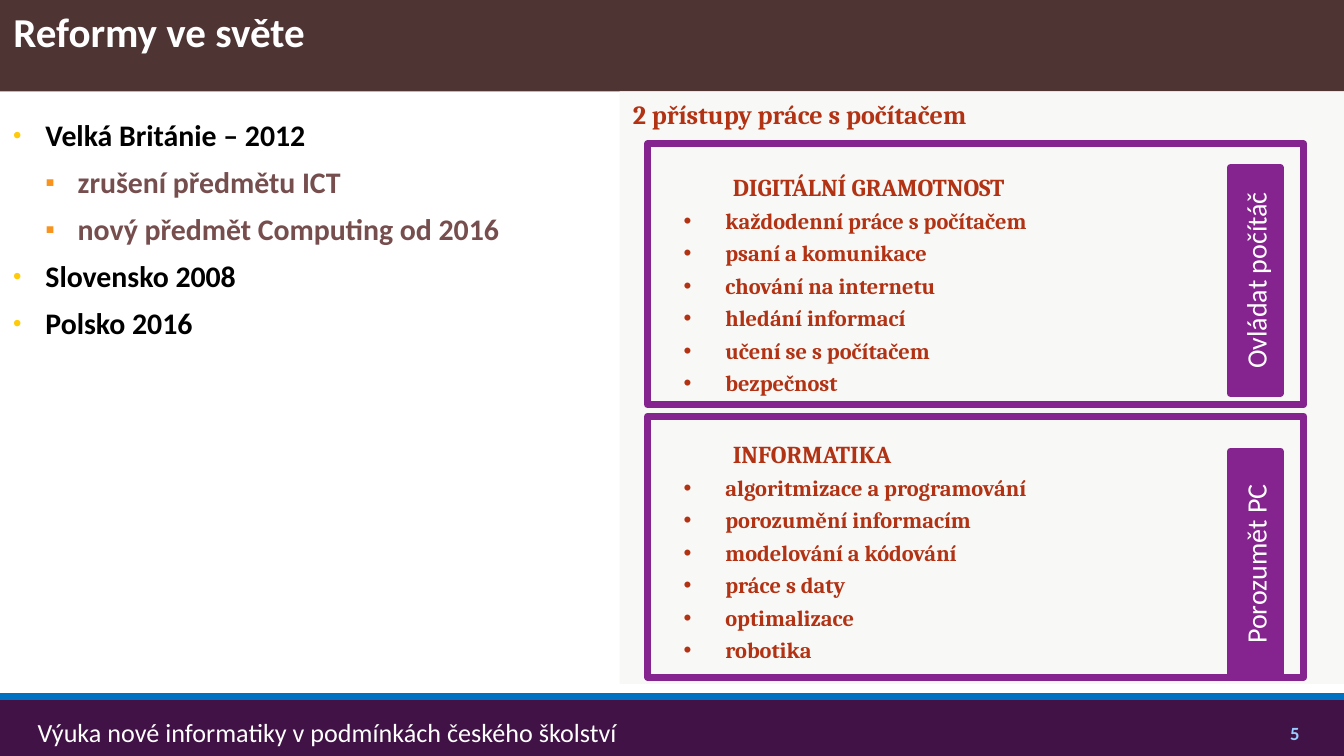
from lxml.etree import SubElement
from pptx import Presentation
from pptx.dml.color import RGBColor
from pptx.enum.shapes import MSO_CONNECTOR, MSO_SHAPE
from pptx.enum.text import MSO_ANCHOR, MSO_AUTO_SIZE, PP_ALIGN
from pptx.oxml.ns import qn
from pptx.util import Cm, Pt

WHITE = RGBColor(0xFF, 0xFF, 0xFF)
BLACK = RGBColor(0x00, 0x00, 0x00)
BROWN = RGBColor(0x4F, 0x34, 0x34)
LIGHT_BROWN = RGBColor(0x76, 0x4E, 0x4E)
PLUM = RGBColor(0x41, 0x12, 0x46)
PURPLE = RGBColor(0x85, 0x24, 0x8F)
BLUE = RGBColor(0x00, 0x70, 0xC0)
PALE_BLUE = RGBColor(0x99, 0xCC, 0xFF)
PALE_GREY = RGBColor(0xF8, 0xF8, 0xF6)
RED = RGBColor(0xB2, 0x32, 0x14)
YELLOW = RGBColor(0xFF, 0xCA, 0x08)
ORANGE = RGBColor(0xF8, 0x93, 0x1D)


def add_text(frame, text, size, color, name="Calibri", bold=False, before=0,
             level=0, margin=0, hanging=0, bullet=None, bullet_color=None, bullet_size=100):
    paragraph = frame.paragraphs[0]
    if paragraph.runs:
        paragraph = frame.add_paragraph()
    paragraph.add_run().text = text
    paragraph.level = level
    paragraph.alignment = PP_ALIGN.LEFT
    paragraph.space_before = Pt(before)
    properties = paragraph._p.get_or_add_pPr()
    properties.set("marL", str(Cm(margin)))
    properties.set("indent", str(-Cm(hanging)))
    if bullet:
        bullet_fill = SubElement(properties, qn("a:buClr"))
        SubElement(bullet_fill, qn("a:srgbClr")).set("val", str(bullet_color or color))
        SubElement(properties, qn("a:buSzPct")).set("val", str(bullet_size * 1000))
        SubElement(properties, qn("a:buFont")).set("typeface", "Arial")
        SubElement(properties, qn("a:buChar")).set("char", bullet)
    paragraph.font.name = name
    paragraph.font.size = Pt(size)
    paragraph.font.bold = bold
    paragraph.font.color.rgb = color
    return paragraph


def add_rectangle(page, left, top, width, height, fill=None, line=None):
    box = page.shapes.add_shape(MSO_SHAPE.RECTANGLE, Cm(left), Cm(top), Cm(width), Cm(height))
    box.shadow.inherit = False
    if fill is None:
        box.fill.background()
    else:
        box.fill.solid()
        box.fill.fore_color.rgb = fill
    if line is None:
        box.line.fill.background()
    else:
        box.line.color.rgb = line
        box.line.width = Pt(3.8)
    box.text_frame.vertical_anchor = MSO_ANCHOR.TOP
    return box


deck = Presentation()
deck.slide_width = Cm(25.4)
deck.slide_height = Cm(14.29)
page = deck.slides.add_slide(deck.slide_layouts[5])

title = page.shapes.title
title.left, title.top, title.width, title.height = Cm(0), Cm(0), Cm(25.4), Cm(1.73)
title.fill.solid()
title.fill.fore_color.rgb = BROWN
title.text_frame.auto_size = MSO_AUTO_SIZE.NONE
title.text_frame.vertical_anchor = MSO_ANCHOR.TOP
add_text(title.text_frame, "Reformy ve světe", 22, WHITE, bold=True)

add_rectangle(page, 0, 13.18, 25.4, 1.11, fill=PLUM)
footer = page.shapes.add_textbox(Cm(0.56), Cm(13.39), Cm(21.9), Cm(0.91)).text_frame
footer.word_wrap = True
footer.vertical_anchor = MSO_ANCHOR.MIDDLE
footer.margin_left = Cm(0.15)
add_text(footer, "Výuka nové informatiky v podmínkách českého školství", 14, WHITE)

number = page.shapes.add_textbox(Cm(22.78), Cm(13.49), Cm(2.03), Cm(0.58)).text_frame
number.word_wrap = True
number.vertical_anchor = MSO_ANCHOR.BOTTOM
number.margin_bottom = 0
add_text(number, "5", 10, PALE_BLUE, bold=True).alignment = PP_ALIGN.RIGHT

footer_line = page.shapes.add_connector(
    MSO_CONNECTOR.STRAIGHT, Cm(0), Cm(13.16), Cm(25.4), Cm(13.16))
footer_line.line.color.rgb = BLUE
footer_line.line.width = Pt(3.78)
SubElement(footer_line._element.spPr, qn("a:effectLst"))

reforms = page.shapes.add_textbox(Cm(0.1), Cm(1.96), Cm(12.4), Cm(10.69)).text_frame
reforms.word_wrap = True
reforms.margin_left = Cm(0.15)
reforms.margin_top = Cm(0.25)
level_styles = [("•", BLACK, YELLOW, 80), ("▪", LIGHT_BROWN, ORANGE, 90)]
for index, (level, text) in enumerate([
    (0, "Velká Británie – 2012"),
    (1, "zrušení předmětu ICT"),
    (1, "nový předmět Computing od 2016"),
    (0, "Slovensko 2008"),
    (0, "Polsko 2016"),
]):
    bullet, color, bullet_color, bullet_size = level_styles[level]
    add_text(reforms, text, 16, color, bold=True, before=6 if index else 0, level=level,
             margin=0.61 * (level + 1), hanging=0.61, bullet=bullet,
             bullet_color=bullet_color, bullet_size=bullet_size)

panel = add_rectangle(page, 11.71, 1.73, 13.69, 11.2, fill=PALE_GREY).text_frame
add_text(panel, "2 přístupy práce s počítačem", 14, RED, "Cambria", True)
approaches = [
    ("DIGITÁLNÍ GRAMOTNOST", "Ovládat počítáč", 2.72, 4.83, [
        "každodenní práce s počítačem", "psaní a komunikace", "chování na internetu",
        "hledání informací", "učení se s počítačem", "bezpečnost"]),
    ("INFORMATIKA", "Porozumět PC", 7.87, 10.19, [
        "algoritmizace a programování", "porozumění informacím", "modelování a kódování",
        "práce s daty", "optimalizace", "robotika"]),
]
for heading, label, frame_top, label_top, skills in approaches:
    add_text(panel, heading, 13, RED, "Cambria", True, before=23, margin=1.89)
    for skill in skills:
        add_text(panel, skill, 12, RED, "Cambria", True, before=3, level=1,
                 margin=1.75, hanging=0.79, bullet="•")
    add_rectangle(page, 12.24, frame_top, 12.4, 4.93, line=PURPLE)
    tag = add_rectangle(page, 21.59, label_top, 4.27, 0.94, fill=PURPLE, line=PURPLE)
    tag.rotation = 270
    tag.text_frame.vertical_anchor = MSO_ANCHOR.MIDDLE
    add_text(tag.text_frame, label, 15, WHITE).alignment = PP_ALIGN.CENTER

deck.save("out.pptx")
